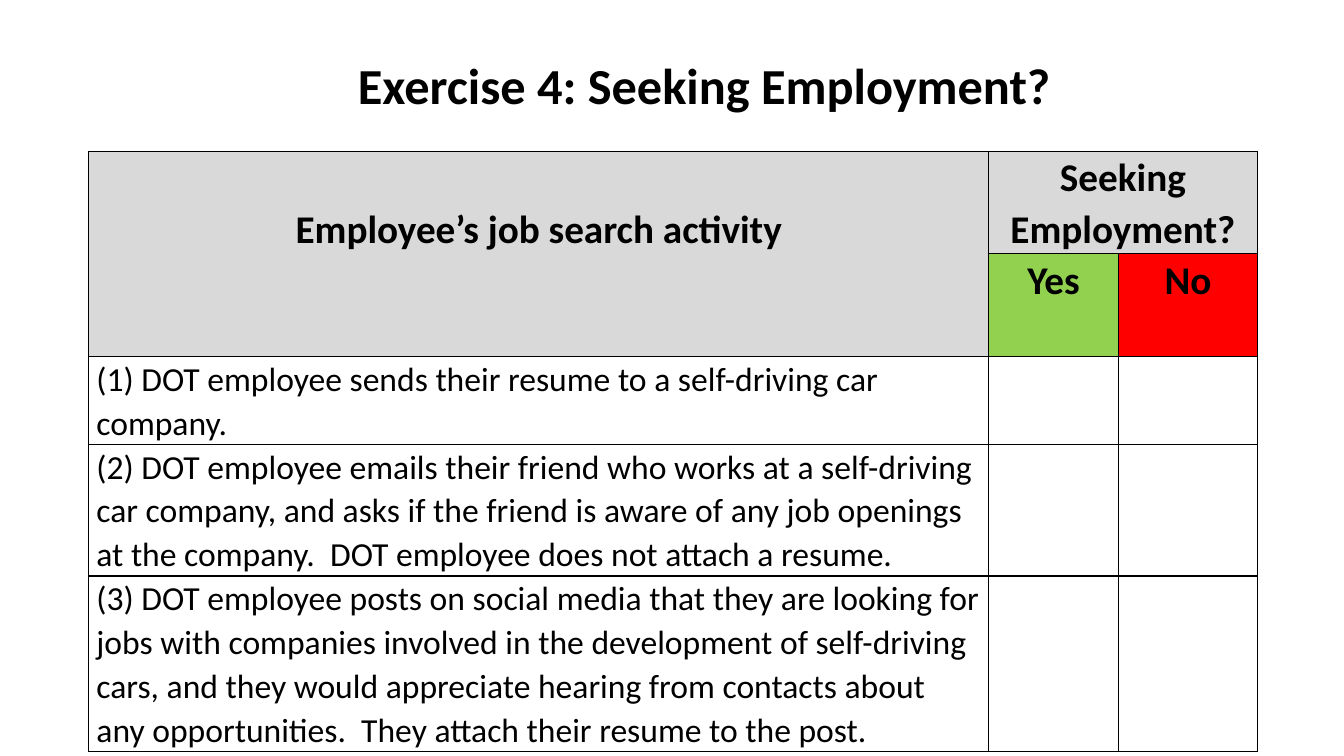
from lxml import etree
from pptx import Presentation
from pptx.dml.color import RGBColor
from pptx.enum import text
from pptx.oxml import ns
from pptx.util import Pt

BLACK = RGBColor(0, 0, 0)
GREY = RGBColor(0xD9, 0xD9, 0xD9)
GREEN = RGBColor(0x92, 0xD0, 0x50)
RED = RGBColor(0xFF, 0, 0)

HEADING = "Exercise 4: Seeking Employment?"
ACTIVITY = "Employee’s job search activity"
QUESTION = "Seeking Employment?"
ANSWERS = [("Yes", GREEN), ("No", RED)]
SITUATIONS = [
    "(1) DOT employee sends their resume to a self-driving car company.",
    "(2) DOT employee emails their friend who works at a self-driving car company, "
    "and asks if the friend is aware of any job openings at the company.  "
    "DOT employee does not attach a resume.",
    "(3) DOT employee posts on social media that they are looking for jobs with "
    "companies involved in the development of self-driving cars, and they would "
    "appreciate hearing from contacts about any opportunities.  "
    "They attach their resume to the post.",
]
COLUMN_WIDTHS = [642.6, 92.9, 99.1]
HEADER_LINE = 36.6
HEADER_HEIGHTS = [73, 73.5]
SITUATION_LINE = 31.35
SITUATION_LINES = [2, 3, 4]


def write(frame, words, size=28, bold=True, align=text.PP_ALIGN.CENTER, spacing=1.07):
    paragraph = frame.paragraphs[0]
    paragraph.alignment = align
    paragraph.line_spacing = spacing
    run = paragraph.add_run()
    run.text = words
    run.font.name = "Calibri"
    run.font.size = Pt(size)
    run.font.bold = bold
    run.font.color.rgb = BLACK


def outline(cell):
    properties = cell._tc.get_or_add_tcPr()
    for side in ("lnL", "lnR", "lnT", "lnB"):
        line = etree.SubElement(properties, ns.qn(f"a:{side}"), w=str(Pt(1)))
        fill = etree.SubElement(line, ns.qn("a:solidFill"))
        etree.SubElement(fill, ns.qn("a:srgbClr"), val=str(BLACK))


def paint(cell, colour):
    cell.fill.solid()
    cell.fill.fore_color.rgb = colour


def main():
    deck = Presentation()
    deck.slide_width, deck.slide_height = Pt(960), Pt(540)
    slide = deck.slides.add_slide(deck.slide_layouts[5])

    heading = slide.shapes.title
    heading.left, heading.top = Pt(248.4), Pt(35.3)
    heading.width, heading.height = Pt(613.4), Pt(51)
    heading.text_frame.vertical_anchor = text.MSO_ANCHOR.TOP
    heading.text_frame.auto_size = text.MSO_AUTO_SIZE.NONE
    write(heading.text_frame, HEADING, size=36, align=text.PP_ALIGN.LEFT, spacing=1.0)

    heights = HEADER_HEIGHTS + [lines * SITUATION_LINE for lines in SITUATION_LINES]
    checklist = slide.shapes.add_table(
        len(heights), len(COLUMN_WIDTHS), Pt(63.5), Pt(108),
        Pt(sum(COLUMN_WIDTHS)), Pt(sum(heights))).table
    checklist.first_row = checklist.horz_banding = False
    for column, width in zip(checklist.columns, COLUMN_WIDTHS):
        column.width = Pt(width)
    for row, height in zip(checklist.rows, heights):
        row.height = Pt(height)
    for cell in checklist.iter_cells():
        cell.margin_left = cell.margin_right = Pt(5.4)
        cell.margin_top = cell.margin_bottom = 0
        outline(cell)
        cell.fill.background()

    activity, question = checklist.cell(0, 0), checklist.cell(0, 1)
    activity.merge(checklist.cell(1, 0))
    question.merge(checklist.cell(0, 2))
    activity.margin_top = Pt(HEADER_LINE)
    for cell, words in ((activity, ACTIVITY), (question, QUESTION)):
        paint(cell, GREY)
        write(cell.text_frame, words)
    for column, (answer, colour) in enumerate(ANSWERS, 1):
        cell = checklist.cell(1, column)
        paint(cell, colour)
        write(cell.text_frame, answer)
    for row, situation in enumerate(SITUATIONS, len(HEADER_HEIGHTS)):
        write(checklist.cell(row, 0).text_frame, situation,
              size=24, bold=False, align=text.PP_ALIGN.LEFT)

    deck.save("out.pptx")


if __name__ == "__main__":
    main()
